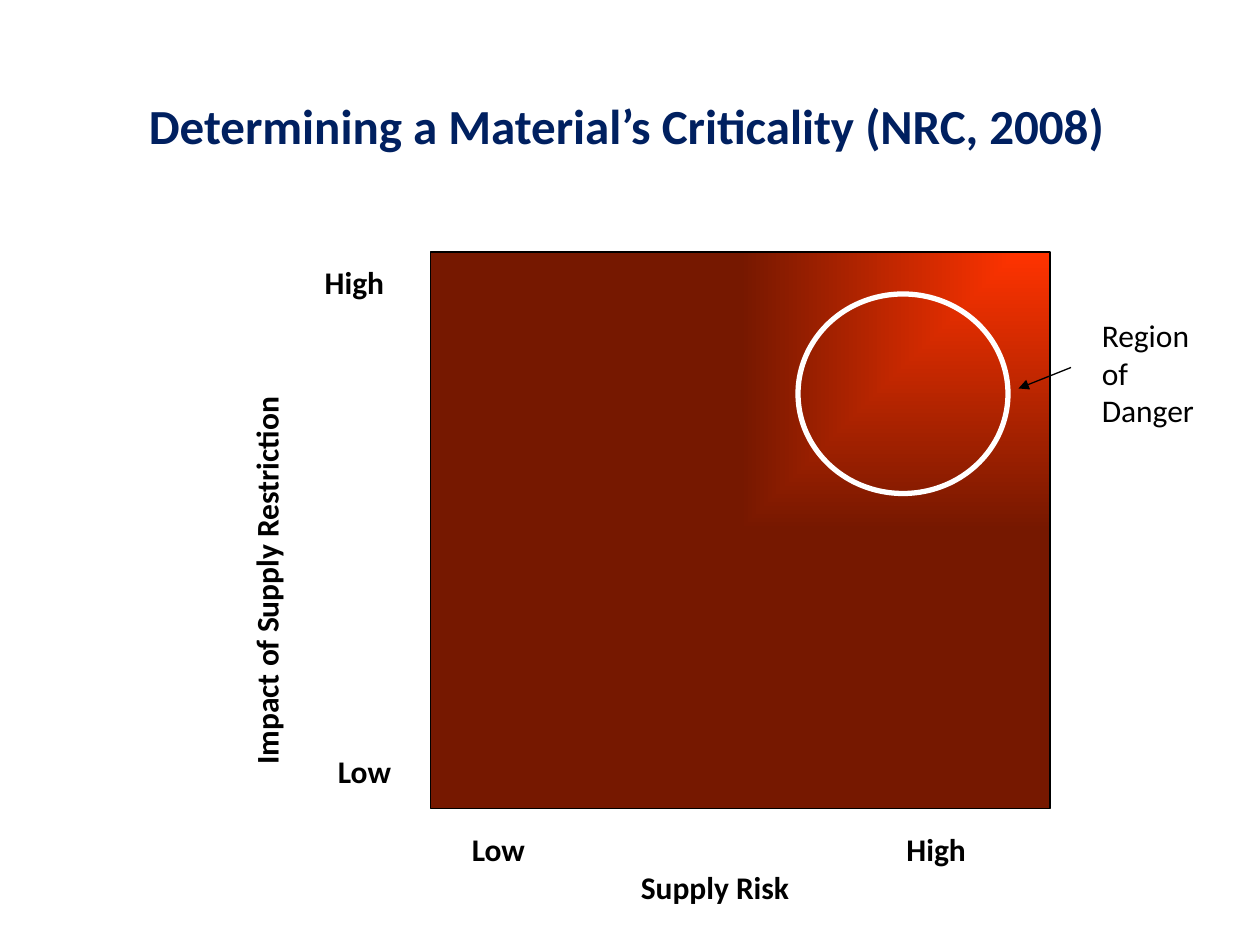
"""Build a slide with a criticality matrix of supply risk against impact of restriction."""
from typing import NamedTuple

from lxml import etree
from pptx import Presentation
from pptx import util as u
from pptx.dml.color import RGBColor
from pptx.enum import shapes, text
from pptx.oxml import parse_xml
from pptx.oxml.ns import qn

COLS, ROWS = 120, 90
WIDTH, HEIGHT = u.Inches(10), u.Inches(7.5)
FONT = "Calibri"
NAVY = RGBColor(0x00, 0x20, 0x60)
BLACK = RGBColor(0x00, 0x00, 0x00)
WHITE = RGBColor(0xFF, 0xFF, 0xFF)
DANGER = RGBColor(0xFF, 0x33, 0x00)
SAFE = RGBColor(0x76, 0x18, 0x00)
DRAWING_NS = "http://schemas.openxmlformats.org/drawingml/2006/main"


class Box(NamedTuple):
    """Hold a place on the grid in columns and rows."""
    col: float
    row: float
    cols: float
    rows: float


class Label(NamedTuple):
    """Hold a text, its place and its turn in degrees."""
    words: str
    box: Box
    rotation: float = 0
    bold: bool = True
    tabs: tuple[float, ...] = ()


LABELS = (
    Label("High", Box(29.75, 24.5, 9.1, 4.8)),
    Label("Low", Box(31, 71, 9, 4.8)),
    Label("Low\t\tHigh\n\tSupply Risk", Box(43.75, 78.5, 51.7, 8.4), tabs=(16.1, 41.4)),
    Label("Impact of Supply Restriction", Box(3.35, 49.6, 44, 4.8), rotation=270),
    Label("Region\nof\nDanger", Box(103.75, 29.5, 12.25, 12), bold=False),
)


def x(cols: float) -> int:
    """Turn columns into a length."""
    return round(WIDTH * cols / COLS)


def y(rows: float) -> int:
    """Turn rows into a length."""
    return round(HEIGHT * rows / ROWS)


def place(box: Box) -> tuple[int, int, int, int]:
    """Turn a grid box into left, top, width and height."""
    return x(box.col), y(box.row), x(box.cols), y(box.rows)


def add_text(s, words: str, box: Box, *, size: float = 18, color: RGBColor = BLACK,
             bold: bool = True, rotation: float = 0, tabs: tuple[float, ...] = ()) -> None:
    """Add a text box with one paragraph for each line."""
    sp = s.shapes.add_textbox(*place(box))
    sp.rotation = rotation
    tf = sp.text_frame
    tf.word_wrap = True
    tf.auto_size = text.MSO_AUTO_SIZE.SHAPE_TO_FIT_TEXT
    tf.text = words
    for p in tf.paragraphs:
        font = p.runs[0].font
        font.name, font.size, font.bold = FONT, u.Pt(size), bold
        font.color.rgb = color
        if tabs:
            stops = etree.SubElement(p._p.get_or_add_pPr(), qn("a:tabLst"))
            for tab in tabs:
                etree.SubElement(stops, qn("a:tab"), pos=str(x(tab)), algn="l")


def add_outline(s, kind: shapes.MSO_SHAPE, box: Box, color: RGBColor, weight: float):
    """Add an unfilled shape with a plain outline."""
    sp = s.shapes.add_shape(kind, *place(box))
    sp.shadow.inherit = False
    sp.fill.background()
    sp.line.color.rgb = color
    sp.line.width = u.Pt(weight)
    return sp


def fill_from_corner(sp, corner: RGBColor, rest: RGBColor) -> None:
    """Fill a shape with a gradient that spreads from its top right corner."""
    gradient = parse_xml(
        f'<a:gradFill xmlns:a="{DRAWING_NS}" rotWithShape="1"><a:gsLst>'
        f'<a:gs pos="0"><a:srgbClr val="{corner}"/></a:gs>'
        f'<a:gs pos="100000"><a:srgbClr val="{rest}"/></a:gs></a:gsLst>'
        '<a:path path="rect"><a:fillToRect l="100000" b="100000"/></a:path></a:gradFill>')
    props = sp._element.spPr
    props.replace(props.find(qn("a:noFill")), gradient)


def add_arrow(s, start: tuple[float, float], end: tuple[float, float]) -> None:
    """Add a thin black arrow between two grid points."""
    sp = s.shapes.add_connector(shapes.MSO_CONNECTOR.STRAIGHT, x(start[0]), y(start[1]),
                                x(end[0]), y(end[1]))
    sp.line.color.rgb = BLACK
    sp.line.width = u.Pt(0.75)
    etree.SubElement(sp.line._get_or_add_ln(), qn("a:tailEnd"), type="triangle")
    etree.SubElement(sp._element.spPr, qn("a:effectLst"))


def main() -> None:
    """Build and save the slide."""
    prs = Presentation()
    prs.slide_width, prs.slide_height = WIDTH, HEIGHT
    s = prs.slides.add_slide(prs.slide_layouts[6])
    add_text(s, "Determining a Material’s Criticality (NRC, 2008)", Box(13, 8.5, 95, 6.9),
             size=28, color=NAVY)
    matrix = add_outline(s, shapes.MSO_SHAPE.RECTANGLE, Box(41, 24, 59, 53), BLACK, 0.75)
    fill_from_corner(matrix, DANGER, SAFE)
    for label in LABELS:
        add_text(s, label.words, label.box, bold=label.bold, rotation=label.rotation,
                 tabs=label.tabs)
    add_outline(s, shapes.MSO_SHAPE.OVAL, Box(76, 28, 20, 19), WHITE, 3)
    add_arrow(s, (102, 35), (97, 37))
    prs.save("out.pptx")


if __name__ == "__main__":
    main()
